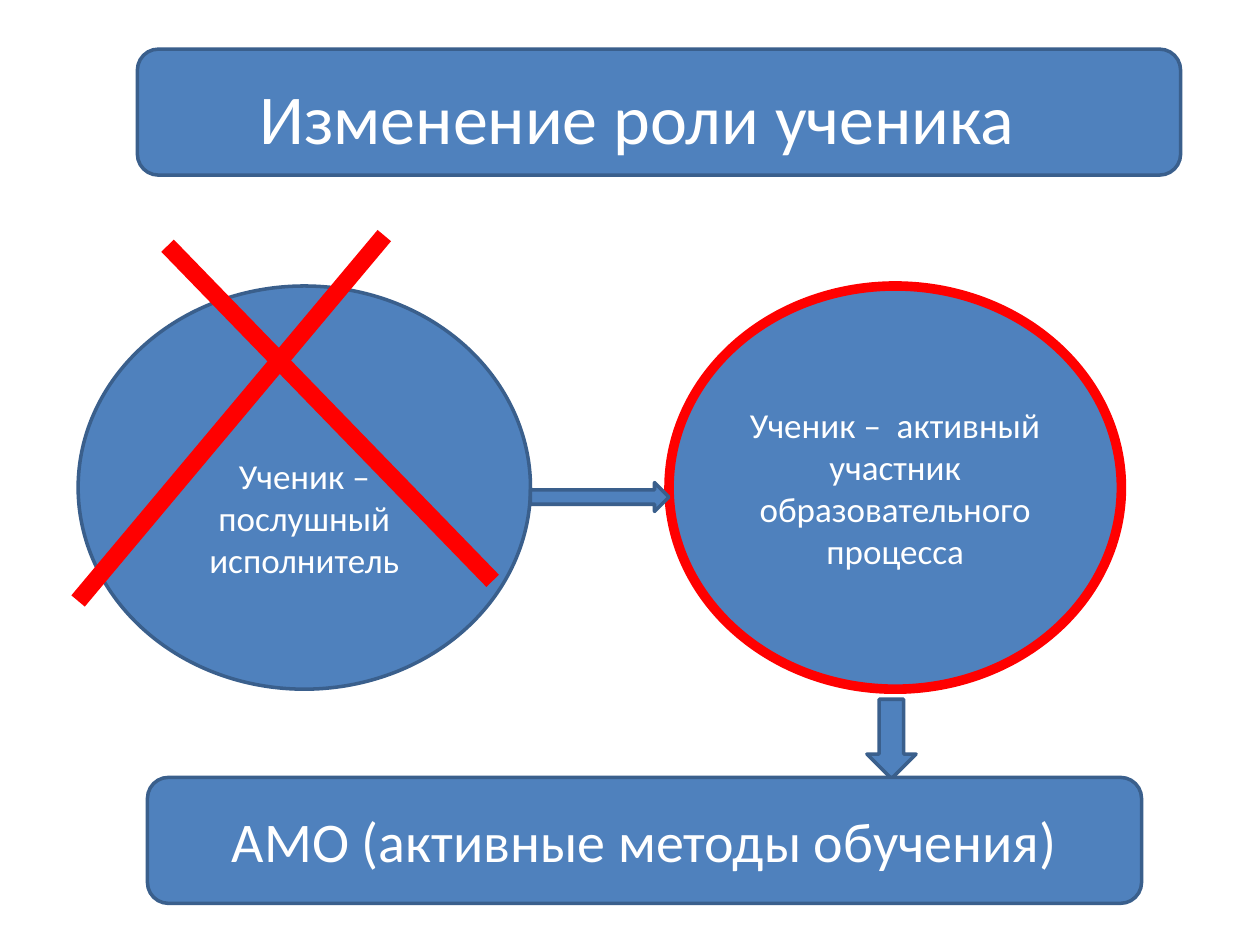
from lxml import etree
from pptx import Presentation
from pptx.dml.color import RGBColor
from pptx.enum.shapes import MSO_CONNECTOR, MSO_SHAPE
from pptx.enum.text import MSO_ANCHOR, PP_ALIGN
from pptx.oxml.ns import qn
from pptx.util import Inches, Pt

ROUNDED = MSO_SHAPE.ROUNDED_RECTANGLE
OVAL = MSO_SHAPE.OVAL
DOWN = MSO_SHAPE.DOWN_ARROW
RIGHT = MSO_SHAPE.RIGHT_ARROW
STRAIGHT = MSO_CONNECTOR.STRAIGHT
MIDDLE = MSO_ANCHOR.MIDDLE
CENTER = PP_ALIGN.CENTER

COLORS = {"fill": "4F81BD", "outline": "3A5F8C", "accent": "FF0000", "text": "FFFFFF"}
FONT = "Calibri"

# Content: role circles share one size and one row
CIRCLE_TOP, CIRCLE_WIDTH, CIRCLE_HEIGHT = 2.27, 3.59, 3.2
OLD_LEFT, NEW_LEFT = 0.62, 5.31
OLD_RIGHT = OLD_LEFT + CIRCLE_WIDTH

TITLE = {"text": "Изменение роли ученика", "size": 40, "box": (0.5, 0.3, 9.11, 1.25)}
SHAPES = [
    {"kind": ROUNDED, "box": (1.09, 0.39, 8.28, 1)},
    {"kind": OVAL, "box": (NEW_LEFT, CIRCLE_TOP, CIRCLE_WIDTH, CIRCLE_HEIGHT),
     "text": "Ученик –  активный участник образовательного процесса",
     "size": 20, "outline": "accent", "weight": 5.5},
    {"kind": OVAL, "box": (OLD_LEFT, CIRCLE_TOP, CIRCLE_WIDTH, CIRCLE_HEIGHT),
     "text": "Ученик – послушный исполнитель", "size": 20, "margin_top": 0.52},
    {"kind": DOWN, "box": (6.88, 5.55, 0.39, 0.63)},
    {"kind": ROUNDED, "box": (1.17, 6.17, 7.89, 1),
     "text": "АМО (активные методы обучения)", "size": 32},
    {"kind": RIGHT, "box": (OLD_RIGHT, 3.83, NEW_LEFT - OLD_RIGHT, 0.23)},
]
CROSS_STROKES = [(3.05, 1.87, 0.62, 4.77), (1.33, 1.95, 3.91, 4.61)]


def color(name):
    return RGBColor.from_string(COLORS[name])


def write_text(shape, text, size, margin_top=0.05):
    frame = shape.text_frame
    settings = {"word_wrap": True, "vertical_anchor": MIDDLE, "margin_top": Inches(margin_top)}
    for name, value in settings.items():
        setattr(frame, name, value)
    paragraph = frame.paragraphs[0]
    paragraph.alignment = CENTER
    run = paragraph.add_run()
    run.text = text
    for name, value in {"name": FONT, "size": Pt(size)}.items():
        setattr(run.font, name, value)
    run.font.color.rgb = color("text")


def set_line(line, color_name, weight):
    line.color.rgb = color(color_name)
    line.width = Pt(weight)


def add_block(slide, part):
    shape = slide.shapes.add_shape(part["kind"], *map(Inches, part["box"]))
    shape.shadow.inherit = False
    shape.fill.solid()
    shape.fill.fore_color.rgb = color("fill")
    set_line(shape.line, part.get("outline", "outline"), part.get("weight", 2))
    if "text" in part:
        write_text(shape, part["text"], part["size"], part.get("margin_top", 0.05))


def add_stroke(slide, ends):
    connector = slide.shapes.add_connector(STRAIGHT, *map(Inches, ends))
    set_line(connector.line, "accent", 10)
    etree.SubElement(connector._element.spPr, qn("a:effectLst"))


def main():
    presentation = Presentation()
    presentation.slide_width, presentation.slide_height = Inches(10), Inches(7.5)
    slide = presentation.slides.add_slide(presentation.slide_layouts[6])

    # Title panel, circles, arrows and result panel
    for part in SHAPES:
        add_block(slide, part)

    # Title text
    title = slide.shapes.add_textbox(*map(Inches, TITLE["box"]))
    write_text(title, TITLE["text"], TITLE["size"])

    # Red cross over the old role
    for ends in CROSS_STROKES:
        add_stroke(slide, ends)

    presentation.save("out.pptx")


if __name__ == "__main__":
    main()
